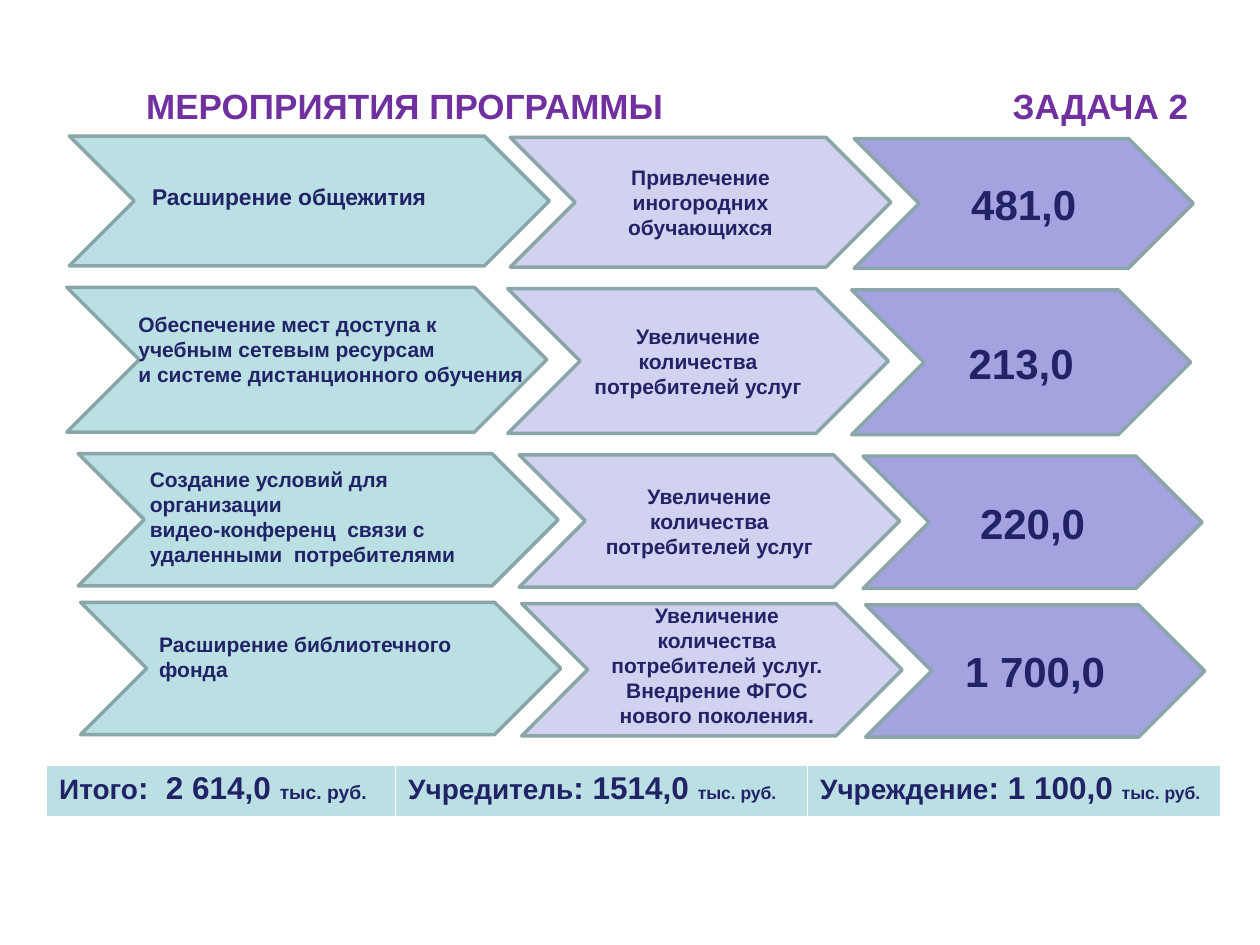
from pptx import Presentation, util as u
from pptx.dml.color import RGBColor
from pptx.enum import shapes, text
from pptx.oxml import parse_xml
from pptx.oxml.ns import nsdecls

# Content
TITLE = ("МЕРОПРИЯТИЯ ПРОГРАММЫ", "ЗАДАЧА 2")
CONSUMERS = "Увеличение количества потребителей услуг"
# left, top, height of each row; texts of its three chevrons
ROWS = [
    (0.55, 1.08, 1.03, ("", "Привлечение иногородних обучающихся", "481,0")),
    (0.53, 2.28, 1.15, ("", CONSUMERS, "213,0")),
    (0.62, 3.6, 1.05, ("", CONSUMERS, "220,0")),
    (0.64, 4.78, 1.05, ("Расширение библиотечного фонда", "", "1 700,0")),
]
# Labels laid over chevrons: place, size, alignment, lines
LEFT, CENTER = text.PP_ALIGN.LEFT, text.PP_ALIGN.CENTER
LABELS = [
    ((1.0, 2.42, 3.42, 0.71), 12, LEFT,
     ["Обеспечение мест доступа к", "учебным сетевым ресурсам",
      "и системе дистанционного обучения"]),
    ((1.09, 3.65, 2.85, 0.91), 12, LEFT,
     ["Создание условий для организации",
      "видео-конференц  связи с удаленными  потребителями"]),
    ((1.11, 1.4, 2.76, 0.32), 13, LEFT, ["Расширение общежития"]),
    ((3.19, 4.73, 5.0, 1.1), 12, CENTER,
     ["Увеличение", "количества", "потребителей услуг.",
      "Внедрение ФГОС", "нового поколения."]),
]
# Each total: runs of text and size
TOTALS = [
    [("Итого", 16), (":  2 614,0 ", 18), ("тыс. руб.", 11)],
    [("Учредитель", 16), (": 1514,0 ", 18), ("тыс. руб.", 10)],
    [("Учреждение", 16), (": 1 100,0 ", 18), ("тыс. руб.", 10)],
]

# Design: offset, drop, width, fill, text size, alignment of chevron columns
COLUMNS = [
    (0, 0, 3.81, "BBE0E3", 12, LEFT),
    (3.5, 0.01, 3.02, "D1D1F0", 12, CENTER),
    (6.23, 0.02, 2.69, "A3A3E0", 24, CENTER),
]
INK, EDGE, PURPLE, TEAL = "222267", "8AA6A8", "7030A0", "BBE0E3"
TOTAL_WIDTHS = (2.77, 3.27, 3.28)


def color(value):
    return RGBColor.from_string(value)


def inches(*values):
    return [u.Inches(value) for value in values]


def style(font, size, ink=INK):
    font.name, font.size, font.bold = "Arial", u.Pt(size), True
    font.color.rgb = color(ink)


def write(frame, lines, size, align):
    frame.word_wrap = True
    frame.text = "\n".join(lines)
    for para in frame.paragraphs:
        para.alignment = align
        for span in para.runs:
            style(span.font, size)


def add_chevron(page, place, fill, words, size, align):
    chevron = page.shapes.add_shape(shapes.MSO_SHAPE.CHEVRON, *inches(*place))
    chevron.shadow.inherit = False
    chevron.fill.solid()
    chevron.fill.fore_color.rgb = color(fill)
    chevron.line.color.rgb = color(EDGE)
    chevron.line.width = u.Pt(2)
    if words:
        frame = chevron.text_frame
        frame.vertical_anchor = text.MSO_ANCHOR.MIDDLE
        write(frame, [words], size, align)
        if align == LEFT:
            frame.margin_bottom = u.Inches(0.24)


def add_title(page):
    title = page.shapes.title
    title.left, title.top, title.width, title.height = inches(0.6, 0.21, 9, 1.25)
    frame = title.text_frame
    frame.vertical_anchor = text.MSO_ANCHOR.MIDDLE
    frame.margin_left = u.Inches(0.56)
    frame.text = "\t".join(TITLE)
    para = frame.paragraphs[0]
    para.alignment = LEFT
    # The second heading ends at a right tab stop
    para._p.get_or_add_pPr().append(parse_xml(
        f'<a:tabLst {nsdecls("a")}><a:tab pos="{u.Inches(8.27)}" algn="r"/></a:tabLst>'))
    for span in para.runs:
        style(span.font, 20, PURPLE)


def add_totals(page):
    place = inches(0.37, 6.07, sum(TOTAL_WIDTHS), 0.41)
    table = page.shapes.add_table(1, len(TOTALS), *place).table
    for index, (width, spans) in enumerate(zip(TOTAL_WIDTHS, TOTALS)):
        table.columns[index].width = u.Inches(width)
        cell = table.cell(0, index)
        cell.fill.solid()
        cell.fill.fore_color.rgb = color(TEAL)
        for words, size in spans:
            span = cell.text_frame.paragraphs[0].add_run()
            span.text = words
            style(span.font, size)


def main():
    deck = Presentation()
    deck.slide_width, deck.slide_height = inches(10, 7.5)
    page = deck.slides.add_slide(deck.slide_layouts[5])
    add_title(page)

    # Rows of chevrons
    for left, top, height, words in ROWS:
        for (offset, drop, width, fill, size, align), label in zip(COLUMNS, words):
            place = (left + offset, top + drop, width, height)
            add_chevron(page, place, fill, label, size, align)

    add_totals(page)

    # Labels over the chevrons
    for place, size, align, lines in LABELS:
        box = page.shapes.add_textbox(*inches(*place))
        write(box.text_frame, lines, size, align)

    deck.save("out.pptx")


if __name__ == "__main__":
    main()
